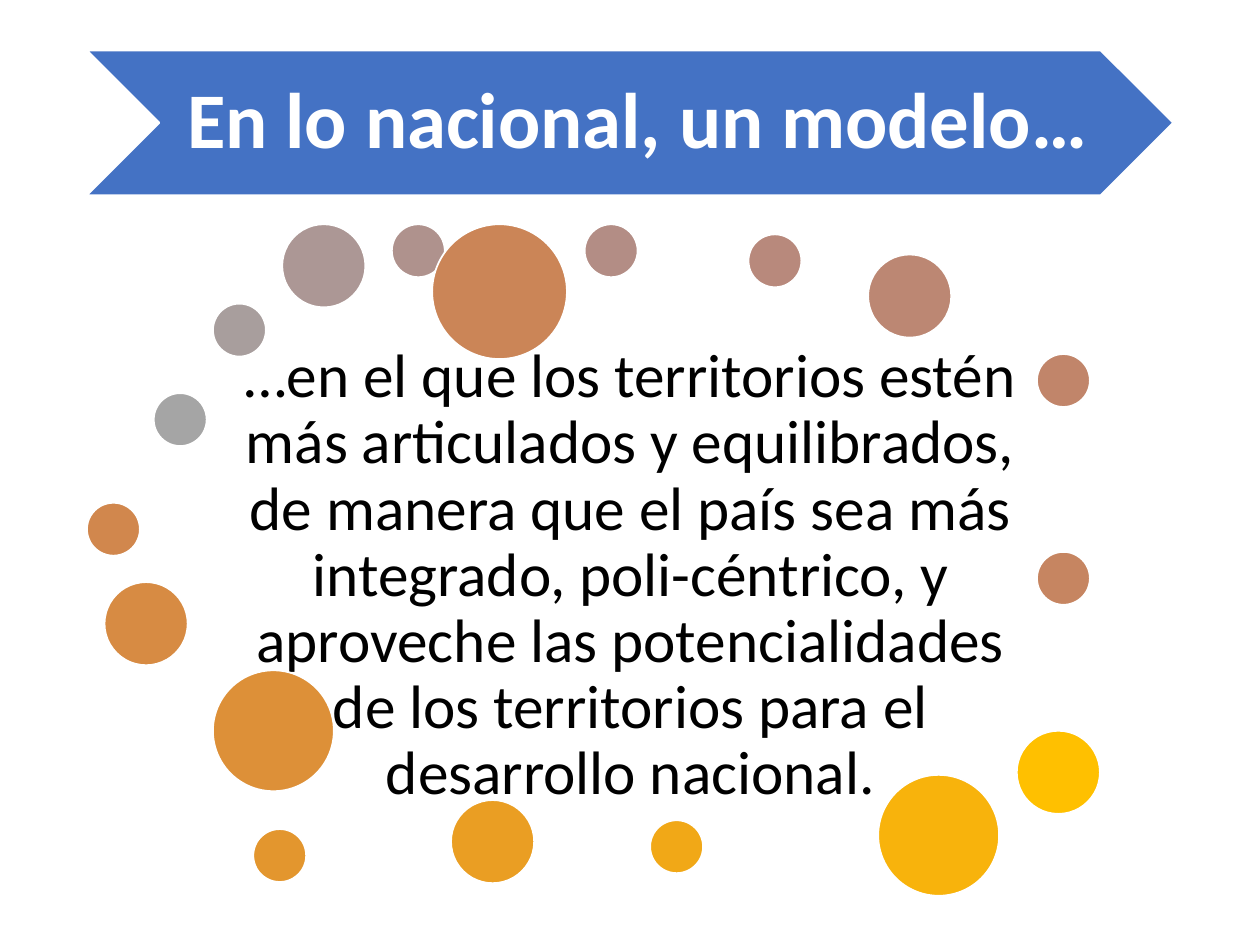
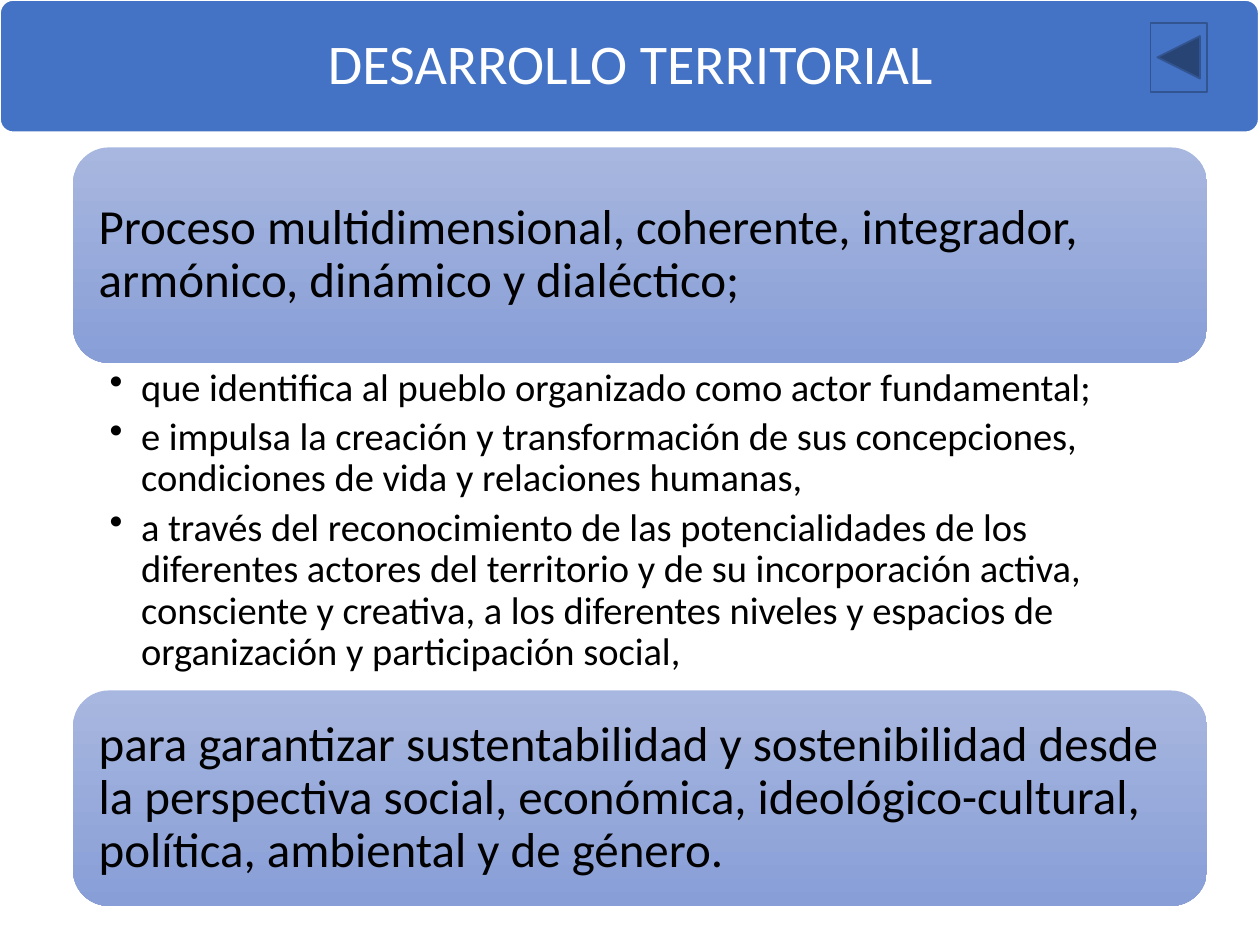
from colorsys import hls_to_rgb

from lxml.etree import SubElement
from pptx import Presentation
from pptx.dml.color import RGBColor
from pptx.enum.shapes import MSO_SHAPE
from pptx.enum.text import MSO_ANCHOR, MSO_AUTO_SIZE, PP_ALIGN
from pptx.oxml.ns import qn
from pptx.util import Inches, Pt

FONT = "Calibri"
BLUE, WHITE, BLACK = "4472C4", "FFFFFF", "000000"
BUTTON_EDGE = "325491"
PANEL_TOP, PANEL_BOTTOM = "A8B7DF", "889ED7"

# Circle diameters, and each circle as left, top, diameter from back to front
SMALL, MEDIUM, LARGE, LARGEST = 0.42, 0.66, 0.96, 1.07
CIRCLES = [
    (1.22, 3.12, SMALL), (1.69, 2.41, SMALL), (2.24, 1.78, MEDIUM),
    (3.11, 1.78, SMALL), (4.64, 1.78, SMALL), (5.94, 1.86, SMALL),
    (6.89, 2.02, MEDIUM), (8.23, 2.81, SMALL), (8.23, 4.38, SMALL),
    (3.43, 1.78, LARGEST), (0.69, 3.99, SMALL), (0.83, 4.62, MEDIUM),
    (1.69, 5.32, LARGE), (2.01, 6.58, SMALL), (3.58, 6.35, MEDIUM),
    (5.16, 6.51, SMALL), (6.97, 6.15, LARGE), (8.07, 5.8, MEDIUM),
]

MODEL = (
    "…en el que los territorios estén más articulados y equilibrados, de manera que "
    "el país sea más integrado, poli-céntrico, y aproveche las potencialidades de los "
    "territorios para el desarrollo nacional."
)
PROCESS = "Proceso multidimensional, coherente, integrador, armónico, dinámico y dialéctico;"
TRAITS = [
    "que identifica al pueblo organizado como actor fundamental;",
    "e impulsa la creación y transformación de sus concepciones, condiciones de vida "
    "y relaciones humanas,",
    "a través del reconocimiento de las potencialidades de los diferentes actores del "
    "territorio y de su incorporación activa, consciente y creativa, a los diferentes "
    "niveles y espacios de organización y participación social,",
]
PURPOSE = (
    "para garantizar sustentabilidad y sostenibilidad desde la perspectiva social, "
    "económica, ideológico-cultural, política, ambiental y de género."
)


def color(hex_code):
    return RGBColor.from_string(hex_code)


def inches(box):
    return [Inches(length) for length in box]


def add_figure(slide, kind, box, fill=None, line=None):
    figure = slide.shapes.add_shape(kind, *inches(box))
    figure.shadow.inherit = False
    if fill:
        figure.fill.solid()
        figure.fill.fore_color.rgb = color(fill)
    if line:
        figure.line.color.rgb = color(line)
        figure.line.width = Pt(1)
    else:
        figure.line.fill.background()
    return figure


def write(holder, paragraphs, size, margins, ink=BLACK, align=PP_ALIGN.LEFT,
          anchor=MSO_ANCHOR.MIDDLE, bold=False):
    frame = holder.text_frame
    frame.word_wrap = True
    frame.auto_size = MSO_AUTO_SIZE.NONE
    frame.vertical_anchor = anchor
    (frame.margin_left, frame.margin_top,
     frame.margin_right, frame.margin_bottom) = inches(margins)
    frame.text = "\n".join(paragraphs)
    for paragraph in frame.paragraphs:
        paragraph.alignment = align
        paragraph.line_spacing = 0.9
        paragraph.font.name = FONT
        paragraph.font.size = Pt(size)
        paragraph.font.bold = bold
        paragraph.font.color.rgb = color(ink)
    return frame


def add_title_band(slide, kind, band_box, text_box, text, size, margins, bold=False):
    band = add_figure(slide, kind, band_box, BLUE, WHITE)
    title = slide.shapes.title
    title.left, title.top, title.width, title.height = inches(text_box)
    write(title, [text], size, margins, WHITE, PP_ALIGN.CENTER, bold=bold)
    # The title stands in front of its band
    band._element.addnext(title._element)
    return band


def add_circles(slide):
    """Ring of circles whose colour runs from grey to amber."""
    for index, (left, top, diameter) in enumerate(CIRCLES):
        share = index / (len(CIRCLES) - 1)
        rgb = hls_to_rgb(45.2 / 360 * share, 0.647 - 0.147 * share, share)
        fill = "".join(f"{round(channel * 255):02X}" for channel in rgb)
        add_figure(slide, MSO_SHAPE.OVAL, (left, top, diameter, diameter), fill, WHITE)


def add_panel(slide, box, text):
    panel = add_figure(slide, MSO_SHAPE.ROUNDED_RECTANGLE, box)
    panel.fill.gradient()
    panel.fill.gradient_angle = 270
    for stop, shade in zip(panel.fill.gradient_stops, (PANEL_TOP, PANEL_BOTTOM)):
        stop.color.rgb = color(shade)
    write(panel, [text], 28, (0.12, 0.12, 0.12, 0.12))


def add_bullets(slide, box, items):
    bullets = slide.shapes.add_textbox(*inches(box))
    frame = write(bullets, items, 22, (0.29, 0.04, 0.22, 0.04), anchor=MSO_ANCHOR.TOP)
    for paragraph in frame.paragraphs:
        paragraph.space_after = Pt(4.4)
        properties = paragraph._p.get_or_add_pPr()
        properties.set("marL", str(Inches(0.25)))
        properties.set("indent", str(-Inches(0.25)))
        bullet = SubElement(properties, qn("a:buChar"), char="•")
        # Bullet marks come before the default run properties
        properties.find(qn("a:defRPr")).addprevious(bullet)


def build_model_slide(slide):
    add_title_band(slide, MSO_SHAPE.CHEVRON, (0.69, 0.4, 8.62, 1.15),
                   (1.26, 0.4, 7.47, 1.15), "En lo nacional, un modelo…", 45,
                   (0.2, 0.07, 0.07, 0.07), bold=True)
    model = slide.shapes.add_textbox(*inches((1.88, 2.65, 6.25, 3.85)))
    write(model, [MODEL], 35, (0.05, 0.05, 0.05, 0.05), align=PP_ALIGN.CENTER)
    add_circles(slide)


def build_development_slide(slide):
    band = add_title_band(slide, MSO_SHAPE.ROUNDED_RECTANGLE, (0, 0, 9.99, 1.05),
                          (0.04, 0.03, 9.93, 0.99), "DESARROLLO TERRITORIAL", 32,
                          (0.13, 0.13, 0.13, 0.13))
    band.adjustments[0] = 0.1

    # Two panels with the bullets between them
    left, top, width, panel_height, bullets_height = 0.58, 1.17, 9, 1.71, 2.6
    bullets_top = top + panel_height
    add_panel(slide, (left, top, width, panel_height), PROCESS)
    add_bullets(slide, (left, bullets_top, width, bullets_height), TRAITS)
    add_panel(slide, (left, bullets_top + bullets_height, width, panel_height), PURPOSE)

    # Back button
    add_figure(slide, MSO_SHAPE.ACTION_BUTTON_BACK_OR_PREVIOUS,
               (9.13, 0.18, 0.45, 0.55), BLUE, BUTTON_EDGE)


def main():
    deck = Presentation()
    deck.slide_width, deck.slide_height = Inches(10), Inches(7.5)
    title_only = deck.slide_layouts[5]
    for build in (build_model_slide, build_development_slide):
        build(deck.slides.add_slide(title_only))
    deck.save("out.pptx")


if __name__ == "__main__":
    main()
